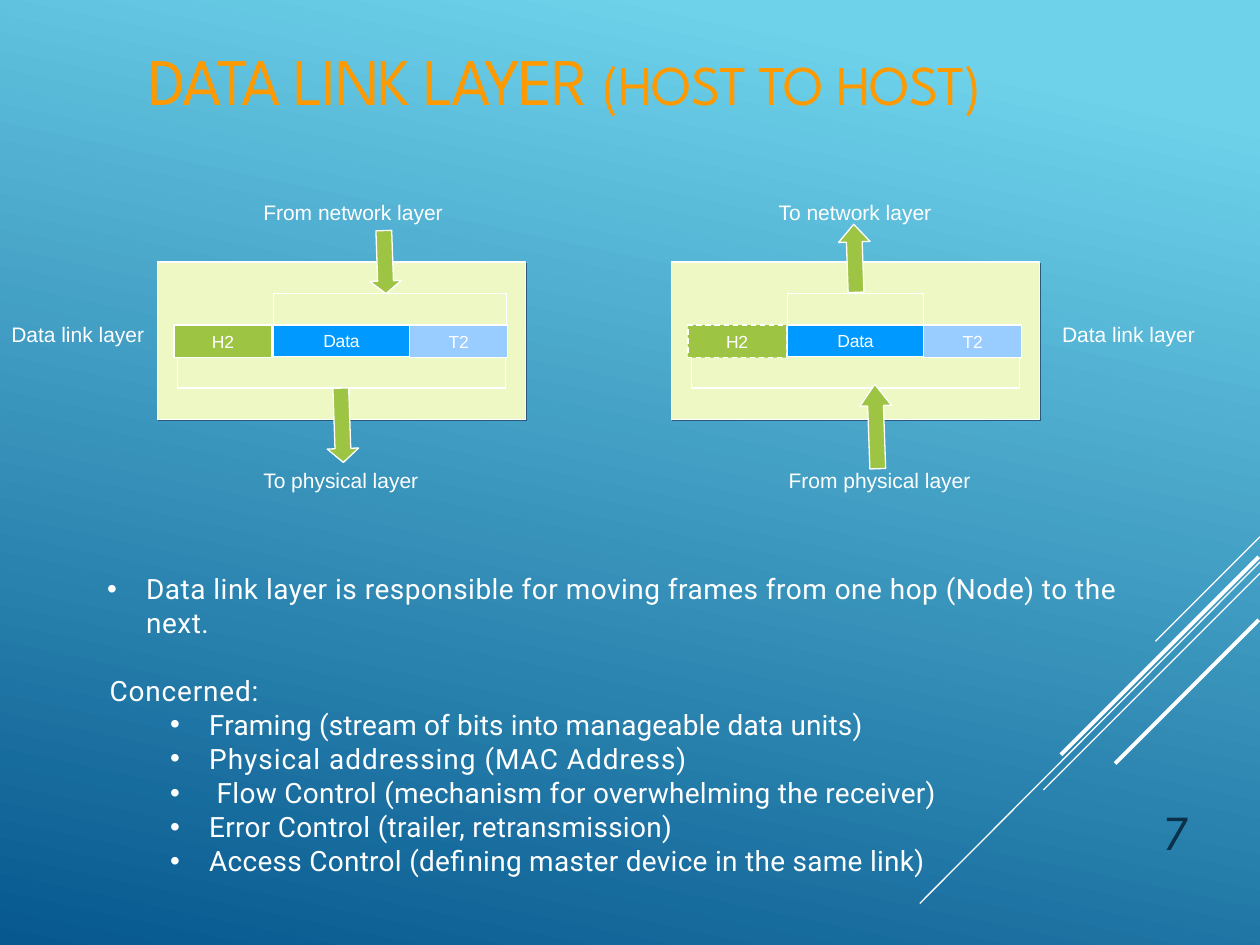
from pptx import Presentation
from pptx.dml.color import RGBColor
from pptx.enum.dml import MSO_LINE
from pptx.enum.shapes import MSO_CONNECTOR, MSO_SHAPE
from pptx.enum.text import MSO_ANCHOR, MSO_AUTO_SIZE, PP_ALIGN
from pptx.oxml.ns import qn
from pptx.util import Inches, Pt
from lxml.etree import SubElement

COLORS = {
    "sky": "6ED2EB", "deep": "06588E", "white": "FFFFFF", "title": "FF9900",
    "number": "0A304A", "shade": "295A7E", "panel": "EDF8C4",
    "green": "9DC443", "blue": "0099FF", "pale": "99CCFF",
}
HEADING, BODY, LABEL = "League Spartan", "Roboto", "Arial"


def rgb(name):
    return RGBColor.from_string(COLORS[name])


class FrameSlide:
    def __init__(self, deck):
        self.slide = deck.slides.add_slide(deck.slide_layouts[1])
        self.shapes = self.slide.shapes

    def background(self, start, end, clockwise):
        fill = self.slide.background.fill
        fill.gradient()
        fill.gradient_angle = 360 - clockwise
        for stop, name, position in zip(fill.gradient_stops, (start, end), (0.1, 1)):
            stop.color.rgb = rgb(name)
            stop.position = position

    def style_run(self, run, font, size, color, spacing=0):
        run.font.name, run.font.size = font, Pt(size)
        run.font.color.rgb = rgb(color)
        run._r.get_or_add_rPr().set("spc", str(round(spacing * 100)))

    def place(self, shape, left, top, width, height):
        shape.left, shape.top = Inches(left), Inches(top)
        shape.width, shape.height = Inches(width), Inches(height)

    def frame(self, shape, anchor=MSO_ANCHOR.TOP, inset=0.01):
        frame = shape.text_frame
        frame.word_wrap, frame.auto_size = True, MSO_AUTO_SIZE.NONE
        frame.margin_left = frame.margin_right = frame.margin_bottom = 0
        frame.margin_top = Inches(inset)
        frame.vertical_anchor = anchor
        return frame

    def title(self, parts, *box):
        heading = self.shapes.title
        self.place(heading, *box)
        line = self.frame(heading, MSO_ANCHOR.MIDDLE).paragraphs[0]
        line.alignment = PP_ALIGN.LEFT
        for text, size, spacing in parts:
            run = line.add_run()
            run.text = text
            self.style_run(run, HEADING, size, "title", spacing)

    def body(self, items, *box):
        holder = self.slide.placeholders[1]
        self.place(holder, *box)
        frame = self.frame(holder)
        frame.text = "\n".join(item[0] for item in items)
        for line, (_, margin, hanging, before, spacing) in zip(frame.paragraphs, items):
            props = line._p.get_or_add_pPr()
            props.set("marL", str(Inches(margin)))
            props.set("indent", str(-Inches(hanging)))
            line.space_before = Pt(before)
            if hanging:
                SubElement(props, qn("a:buChar")).set("char", "•")
            else:
                SubElement(props, qn("a:buNone"))
            self.style_run(line.runs[0], BODY, 16, "white", spacing)

    def text(self, text, *box, size=12, font=LABEL, color="white",
             align=PP_ALIGN.LEFT, anchor=MSO_ANCHOR.TOP):
        frame = self.frame(self.shapes.add_textbox(*map(Inches, box)), anchor)
        frame.text = text
        line = frame.paragraphs[0]
        line.alignment = align
        self.style_run(line.runs[0], font, size, color)

    def outline(self, shape, color="white"):
        shape.shadow.inherit = False
        shape.line.color.rgb = rgb(color)
        shape.line.width = Pt(0.75)

    def block(self, fill, *box, text="", line="white", dashed=False, kind=MSO_SHAPE.RECTANGLE):
        shape = self.shapes.add_shape(kind, *map(Inches, box))
        shape.fill.solid()
        shape.fill.fore_color.rgb = rgb(fill)
        self.outline(shape, line)
        if dashed:
            shape.line.dash_style = MSO_LINE.DASH
        if text:
            frame = self.frame(shape, MSO_ANCHOR.MIDDLE, inset=0)
            frame.text = text
            frame.paragraphs[0].alignment = PP_ALIGN.CENTER
            self.style_run(frame.paragraphs[0].runs[0], LABEL, 10, "white", -0.1)
        return shape

    def bracket(self, left, right, open_y, closed_y):
        start, *corners = [
            (Inches(x), Inches(y)) for x, y in
            [(left, open_y), (left, closed_y), (right, closed_y), (right, open_y)]]
        builder = self.shapes.build_freeform(*start)
        builder.add_line_segments(corners, close=False)
        shape = builder.convert_to_shape()
        shape.fill.background()
        self.outline(shape)

    def arrow(self, kind, left, top, height, head):
        shape = self.block("green", left, top, 0.25, height, kind=kind)
        shape.adjustments[0], shape.adjustments[1] = 0.5, head / 0.25
        shape.rotation = -2

    def stripe(self, x1, y1, x2, y2, width):
        line = self.shapes.add_connector(
            MSO_CONNECTOR.STRAIGHT, *map(Inches, (x1, y1, x2, y2)))
        line.line.color.rgb = rgb("white")
        line.line.width = Pt(width)
        SubElement(line._element.spPr, qn("a:effectLst"))

    def panel(self, left, top_end, received):
        self.block("shade", left + 0.01, 2.09, 2.92, 1.25, line="shade")
        self.block("panel", left, 2.08, 2.92, 1.25)
        self.block("blue", left + 0.92, 2.58, 1.08, 0.25, text="Data")
        self.block("green", left + 0.13, 2.58, 0.78, 0.26, text="H2", dashed=received)
        self.bracket(left + 0.16, left + 2.76, 2.83, 3.08)
        self.bracket(left + 0.92, left + top_end, 2.58, 2.33)
        self.block("pale", left + 2, 2.58, 0.78, 0.26, text="T2")


def main():
    deck = Presentation()
    deck.slide_width, deck.slide_height = Inches(10), Inches(7.5)
    page = FrameSlide(deck)
    page.background("sky", "deep", 102)

    for stripe in [
        (10, 4.26, 9.17, 5.09, 0.75), (10, 4.46, 7.3, 7.17, 0.75),
        (10, 4.55, 8.28, 6.27, 0.75), (9.99, 4.42, 8.42, 5.99, 2.25),
        (9.99, 4.92, 8.85, 6.06, 2.25),
    ]:
        page.stripe(*stripe)

    page.title([("DATA LINK LAYER ", 38, -1.2), ("(HOST TO HOST)", 32, -0.6)],
               1.18, 0.29, 7.66, 0.66)
    page.text("7", 8.5, 6.1, 0.94, 0.73, size=28, font=HEADING, color="number",
              align=PP_ALIGN.RIGHT, anchor=MSO_ANCHOR.BOTTOM)

    concerns = [
        ("Framing (stream of bits into manageable data units)", 0.87, 0.1),
        ("Physical addressing (MAC Address)", 0.87, 0.6),
        ("Flow Control (mechanism for overwhelming the receiver)", 0.93, 0.2),
        ("Error Control (trailer, retransmission)", 0.87, 0.2),
        ("Access Control (defining master device in the same link)", 0.87, 0.2),
    ]
    page.body(
        [("Data link layer is responsible for moving frames from one hop (Node) to the next.",
          0.37, 0.31, 0, 0.3),
         ("Concerned:", 0.08, 0, 19.5, 0.5)]
        + [(text, margin, margin - 0.56, 0.3, spacing) for text, margin, spacing in concerns],
        0.79, 4.53, 8.11, 2.44)

    page.panel(1.25, 2.77, received=False)
    page.panel(5.33, 2, received=True)

    for label, left, top, width in [
        ("From network layer", 2.09, 1.57, 1.5), ("To network layer", 6.18, 1.57, 1.3),
        ("To physical layer", 2.09, 3.7, 1.3), ("From physical layer", 6.26, 3.7, 1.5),
        ("Data link layer", 0.09, 2.54, 1.1), ("Data link layer", 8.43, 2.54, 1.1),
    ]:
        page.text(label, left, top, width, 0.23)

    down, up = MSO_SHAPE.DOWN_ARROW, MSO_SHAPE.UP_ARROW
    for arrow in [
        (up, 6.83, 3.05, 0.67, 0.17), (up, 6.66, 1.78, 0.54, 0.14),
        (down, 2.59, 3.08, 0.59, 0.11), (down, 2.93, 1.83, 0.5, 0.1),
    ]:
        page.arrow(*arrow)

    deck.save("out.pptx")


if __name__ == "__main__":
    main()
